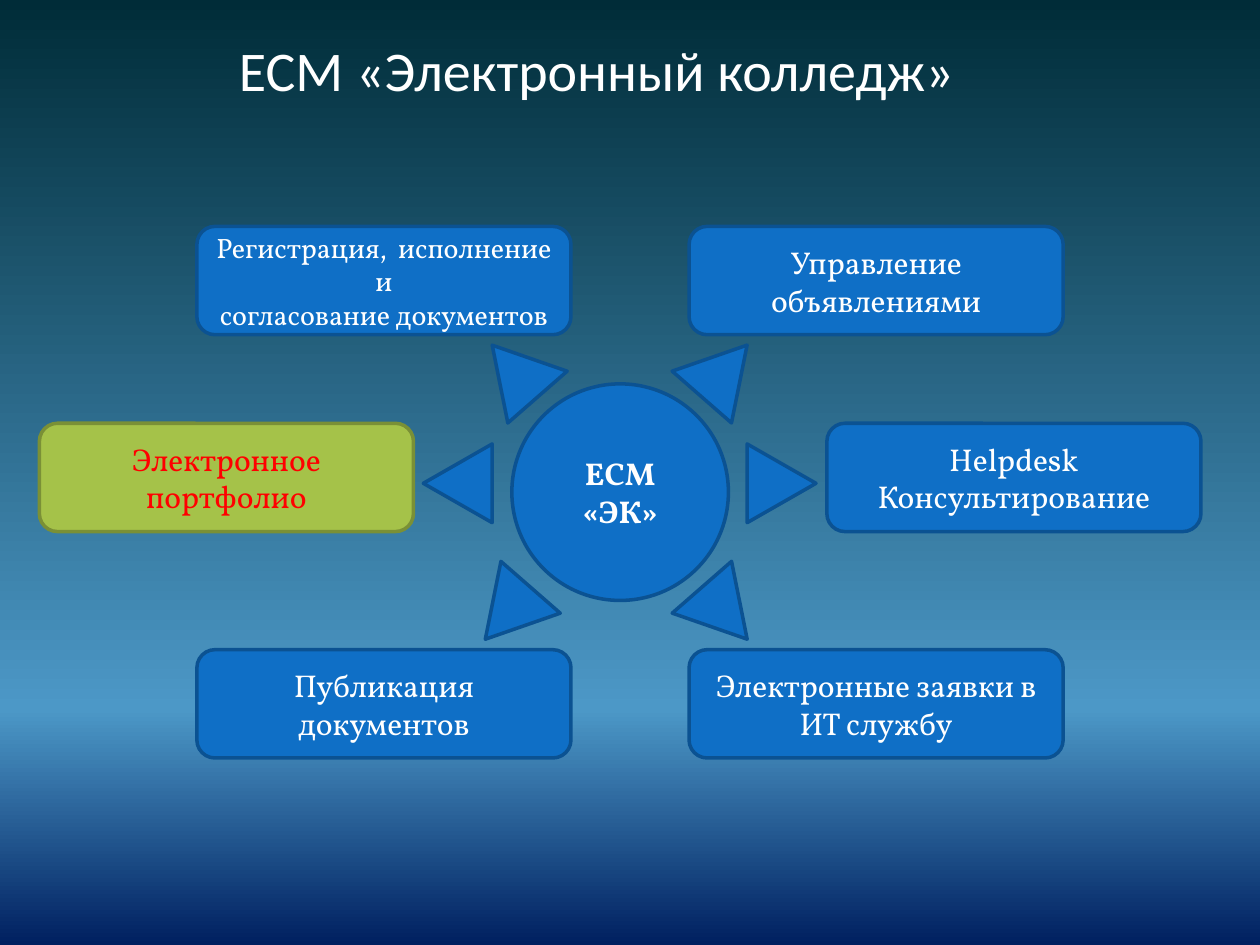
from copy import deepcopy
from dataclasses import dataclass

from pptx import Presentation
from pptx import util as u
from pptx.dml.color import RGBColor
from pptx.enum import shapes, text

# The slide is a grid of square cells
COLUMNS = 64
CELL = u.Inches(10) / COLUMNS
ROWS = 48

WHITE = RGBColor(0xFF, 0xFF, 0xFF)
RED = RGBColor(0xFF, 0x00, 0x00)
BLUE = RGBColor(0x0F, 0x6F, 0xC6)
BLUE_EDGE = RGBColor(0x0B, 0x52, 0x92)
GREEN = RGBColor(0xA5, 0xC2, 0x49)
GREEN_EDGE = RGBColor(0x7A, 0x90, 0x36)
BACKDROP = [
    (0, RGBColor(0x00, 0x20, 0x60)),
    (0.25, RGBColor(0x4C, 0x98, 0xC7)),
    (1, RGBColor(0x00, 0x2C, 0x38)),
]

SHAPE = shapes.MSO_SHAPE
TOPIC_SIZE = (19, 5.5)
ARROW_SIZE = (4, 3.5)


@dataclass
class Node:
    column: float
    row: float
    lines: tuple[str, ...]
    size: tuple[float, float] = TOPIC_SIZE
    kind: int = SHAPE.ROUNDED_RECTANGLE
    points: int = 18
    bold: bool = False
    ink: RGBColor = WHITE
    fill: RGBColor = BLUE
    edge: RGBColor = BLUE_EDGE


@dataclass
class Arrow:
    column: float
    row: float
    angle: float


HUB = Node(26, 19.5, ("ECM «ЭК»",), size=(11, 11), kind=SHAPE.OVAL, bold=True)

TOPICS = [
    Node(10, 11.5, ("Регистрация,  исполнение и", "согласование документов"), points=16),
    Node(2, 21.5, ("Электронное портфолио",), ink=RED, fill=GREEN, edge=GREEN_EDGE),
    Node(35, 11.5, ("Управление объявлениями",)),
    Node(42, 21.5, ("Helpdesk", "Консультирование")),
    Node(10, 33, ("Публикация", "документов")),
    Node(35, 33, ("Электронные заявки в ИТ службу",)),
]

ARROWS = [
    Arrow(21.25, 22.8, 270),
    Arrow(37.7, 22.8, 90),
    Arrow(23.8, 29.4, 221.1),
    Arrow(34.8, 29.4, 138.9),
    Arrow(24.15, 17.1, 318.9),
    Arrow(34.8, 17.1, 41.1),
]


def cells(*counts: float) -> list[int]:
    return [round(count * CELL) for count in counts]


def set_all(target, values: dict) -> None:
    for name, value in values.items():
        setattr(target, name, value)


def write(box, lines: tuple[str, ...], font: dict, ink: RGBColor, align) -> None:
    frame = box.text_frame
    frame.word_wrap = True
    for index, line in enumerate(lines):
        para = frame.paragraphs[0] if index == 0 else frame.add_paragraph()
        para.alignment = align
        span = para.add_run()
        span.text = line
        set_all(span.font, font)
        span.font.color.rgb = ink


def add_solid(page, kind, column, row, size, fill: RGBColor, edge: RGBColor):
    shape = page.shapes.add_shape(kind, *cells(column, row, *size))
    shape.shadow.inherit = False
    shape.fill.solid()
    shape.fill.fore_color.rgb = fill
    shape.line.color.rgb = edge
    shape.line.width = u.Pt(2)
    return shape


def add_node(page, node: Node) -> None:
    box = add_solid(page, node.kind, node.column, node.row, node.size, node.fill, node.edge)
    box.text_frame.vertical_anchor = text.MSO_ANCHOR.MIDDLE
    font = {"name": "Vollkorn", "size": u.Pt(node.points), "bold": node.bold}
    write(box, node.lines, font, node.ink, text.PP_ALIGN.CENTER)


def add_arrow(page, arrow: Arrow) -> None:
    triangle = add_solid(page, SHAPE.ISOSCELES_TRIANGLE, arrow.column, arrow.row,
                         ARROW_SIZE, BLUE, BLUE_EDGE)
    triangle.rotation = arrow.angle


def add_title(page, title: str) -> None:
    box = page.shapes.add_textbox(*cells(11.5, 1.5, 42, 4.1))
    font = {"name": "Calibri", "size": u.Pt(32)}
    write(box, (title,), font, WHITE, text.PP_ALIGN.LEFT)


def paint_background(page) -> None:
    fill = page.background.fill
    fill.gradient()
    fill.gradient_angle = 90
    # A new gradient has two stops; the third is a clone of the last
    last = fill.gradient_stops[-1]._gs
    last.addnext(deepcopy(last))
    for stop, (position, color) in zip(fill.gradient_stops, BACKDROP):
        stop.position = position
        stop.color.rgb = color


def main() -> None:
    deck = Presentation()
    deck.slide_width, deck.slide_height = cells(COLUMNS, ROWS)
    page = deck.slides.add_slide(deck.slide_layouts[6])
    paint_background(page)
    add_title(page, "ECM «Электронный колледж»")
    # Hub with its topics, then the arrows between them
    for node in [HUB, *TOPICS]:
        add_node(page, node)
    for arrow in ARROWS:
        add_arrow(page, arrow)
    deck.save("out.pptx")


if __name__ == "__main__":
    main()
